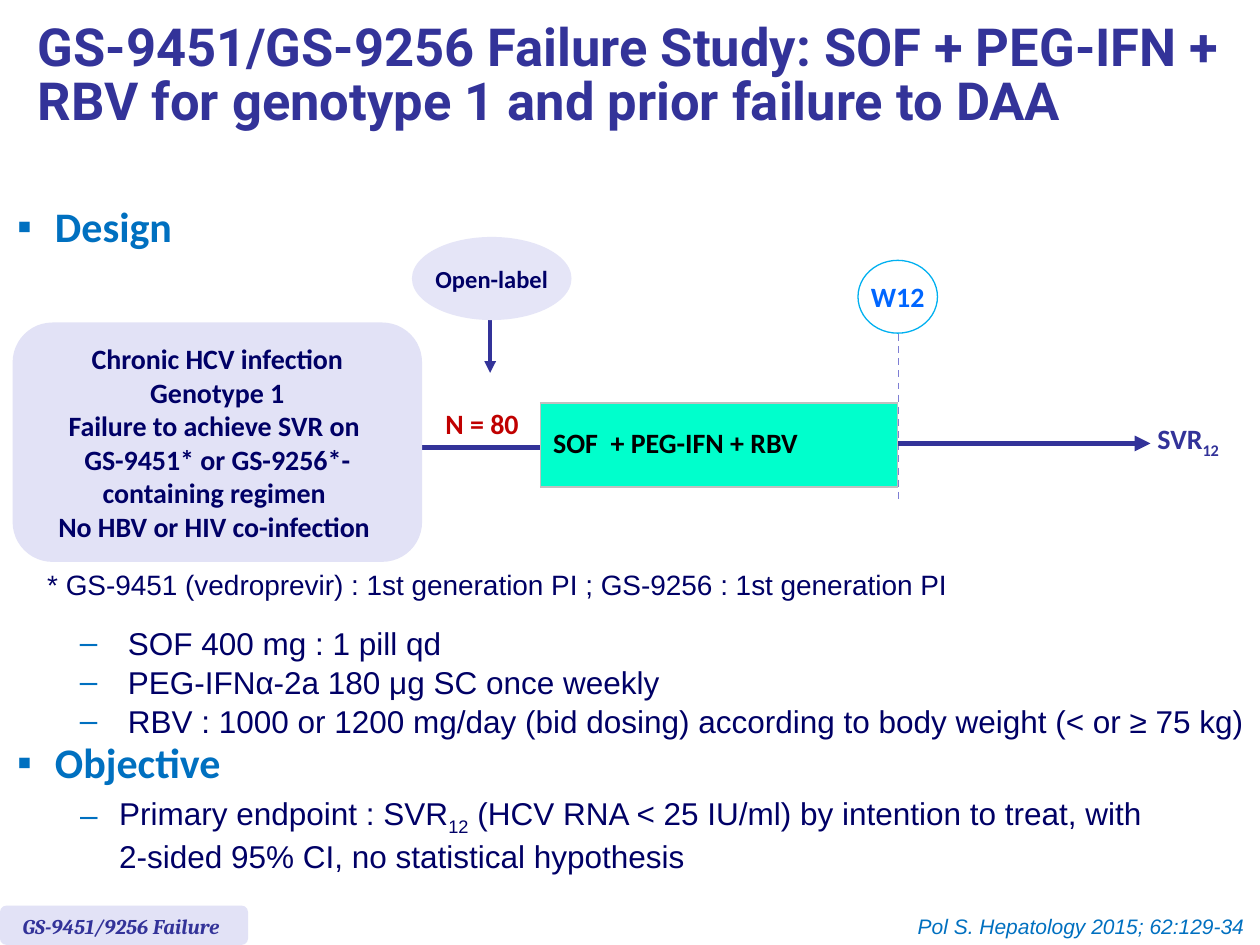
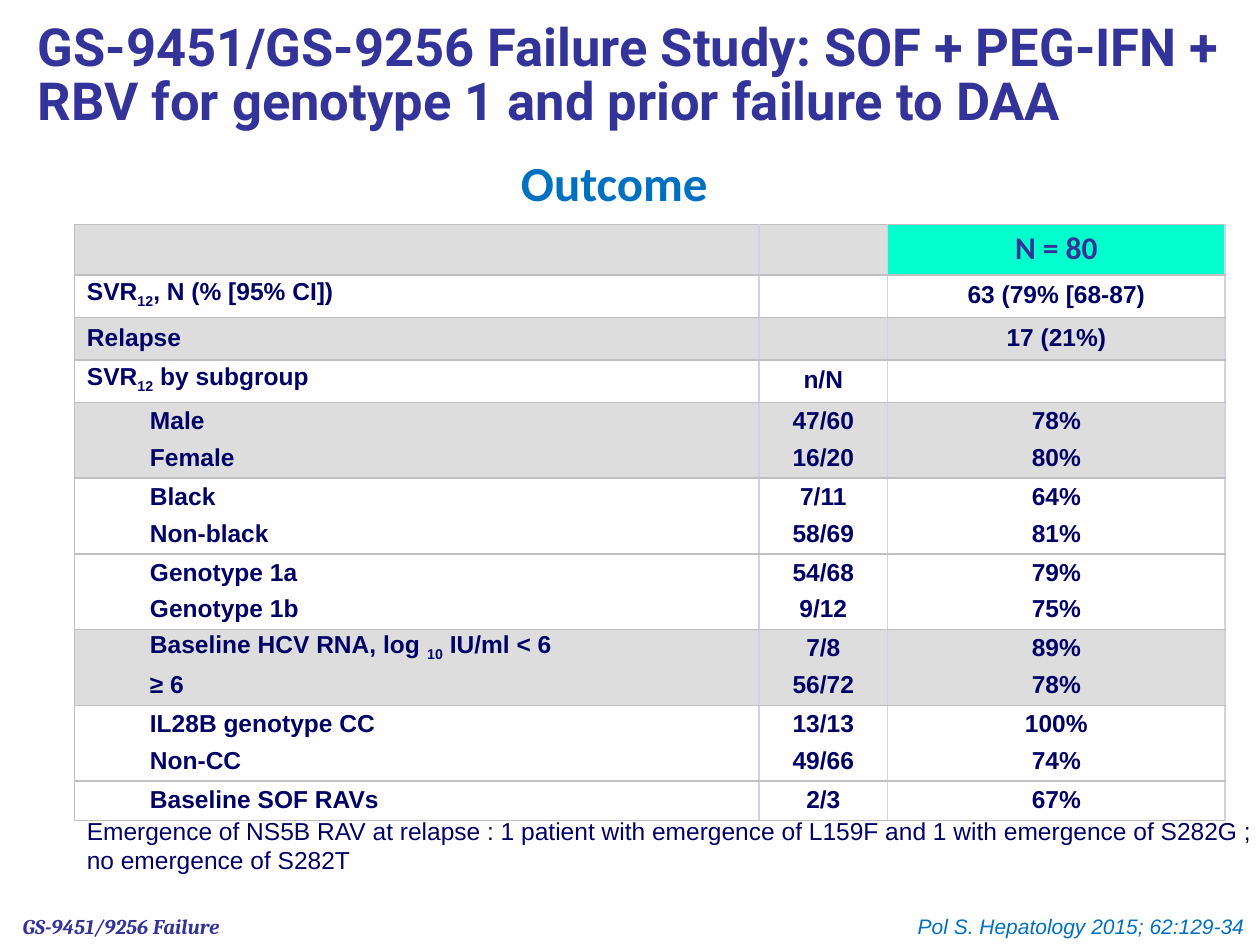
from dataclasses import dataclass

from lxml import etree
from pptx import Presentation
from pptx.dml.color import RGBColor
from pptx.enum.dml import MSO_LINE
from pptx.enum.shapes import MSO_CONNECTOR, MSO_SHAPE
from pptx.enum.text import MSO_ANCHOR, MSO_AUTO_SIZE, PP_ALIGN
from pptx.oxml.ns import qn
from pptx.util import Pt

STRAIGHT = MSO_CONNECTOR.STRAIGHT
ELLIPSE, ROUNDED = MSO_SHAPE.OVAL, MSO_SHAPE.ROUNDED_RECTANGLE
LEFT, CENTER, RIGHT = PP_ALIGN.LEFT, PP_ALIGN.CENTER, PP_ALIGN.RIGHT
TOP, MIDDLE = MSO_ANCHOR.TOP, MSO_ANCHOR.MIDDLE
DASH = MSO_LINE.DASH
NO_FIT = MSO_AUTO_SIZE.NONE

INDIGO, NAVY, BLUE = "333399", "000066", "0070C0"
LAVENDER, AQUA, WHITE = "E2E2F6", "00FFCC", "FFFFFF"
GREY, RULE, LILAC = "DDDDDD", "C0C0C0", "D0D0F0"

TITLE = ("GS-9451/GS-9256 Failure Study: SOF + PEG-IFN + RBV "
         "for genotype 1 and prior failure to DAA")
STUDY = "GS-9451/9256 Failure"
CITATION = "Pol S. Hepatology 2015; 62:129-34"


@dataclass(frozen=True)
class Style:
    size: float
    font: str
    color: str
    bold: bool = False
    italic: bool = False
    align: PP_ALIGN = LEFT
    spacing: object = None
    before: float = 0
    after: float = 0
    margin: float = 0
    hanging: float = 0
    bullet: str = ""


@dataclass(frozen=True)
class Box:
    x: float
    y: float
    w: float
    h: float

    def lengths(self) -> list:
        return [Pt(v) for v in (self.x, self.y, self.w, self.h)]


@dataclass(frozen=True)
class Line:
    x1: float
    y1: float
    x2: float
    y2: float
    width: float
    color: str = INDIGO
    dashed: bool = False
    arrow: bool = False


@dataclass(frozen=True)
class Bubble:
    shape: MSO_SHAPE
    box: Box
    fill: str
    lines: tuple
    style: Style
    outline: str = ""
    inset: float = 7.2


@dataclass(frozen=True)
class Row:
    height: float
    fill: str
    cells: tuple
    indented: bool = False


HEADING = Style(30, "Roboto", INDIGO, bold=True, spacing=0.85)
SECTION = Style(24, "Calibri", BLUE, bold=True, margin=21.6, hanging=21.6, bullet="▪")
DOSE = Style(18, "Arial", NAVY, before=0.7, margin=63.4, hanging=27.4, bullet="–")
ENDPOINT = Style(18, "Arial", NAVY, before=4, margin=58.3, hanging=22.3, bullet="–")
STUDY_TAG = Style(12, "Cambria", INDIGO, bold=True, italic=True)
SOURCE = Style(12, "Arial", BLUE, italic=True, align=RIGHT)
NOTE = Style(16, "Arial", NAVY)
SMALL_NOTE = Style(14, "Arial", NAVY)
COUNT = Style(16, "Calibri", "C00000", bold=True, align=CENTER)
RESULT = Style(16, "Calibri", INDIGO, bold=True)
ARM = Style(16, "Calibri", "000000", bold=True, spacing=0.8)
POPULATION = Style(16, "Calibri", NAVY, bold=True, align=CENTER)
LABEL = Style(14, "Calibri", NAVY, bold=True, align=CENTER)
WEEK = Style(16, "Calibri", "0066FF", bold=True, align=CENTER)
OUTCOME = Style(28, "Calibri", BLUE, bold=True, align=CENTER, spacing=Pt(15.2))
HEAD_CELL = Style(18, "Calibri", INDIGO, bold=True, align=CENTER, spacing=Pt(21), after=6)
NAME_CELL = Style(14, "Arial", NAVY, bold=True, spacing=Pt(15), after=6)
GROUP_CELL = Style(14, "Arial", NAVY, bold=True, spacing=Pt(15), after=6, margin=36)
VALUE_CELL = Style(14, "Arial", NAVY, bold=True, align=CENTER, spacing=Pt(15), after=6)

CONNECTORS = (
    Line(237.6, 255.6, 315.4, 255.6, 3),
    Line(513.4, 190.8, 513.4, 285.1, 1, color="7E7ED4", dashed=True),
    Line(513.4, 253.4, 657.4, 253.4, 3, arrow=True),
    Line(280.1, 182.2, 280.1, 213.1, 2.25, arrow=True),
)

BUBBLES = (
    Bubble(ELLIPSE, Box(490.3, 148.8, 45.4, 41.6), WHITE, ("W12",), WEEK,
           outline="00B0F0", inset=0),
    Bubble(ROUNDED, Box(7.2, 184.3, 234, 136.8), LAVENDER,
           ("Chronic HCV infection", "Genotype 1", "Failure to achieve SVR on ",
            "GS-9451* or GS-9256*-", "containing regimen ",
            "No HBV or HIV co-infection "), POPULATION),
    Bubble(ELLIPSE, Box(235.4, 135.4, 91.2, 47.5), "E5E5F7", ("Open-label",), LABEL, inset=0),
)

ROWS = (
    Row(28.4, GREY, ("", "", "N = 80")),
    Row(24.3, WHITE, ("SVR|12|, N (% [95% CI])", "", "63 (79% [68-87)")),
    Row(24.3, GREY, ("Relapse", "", "17 (21%)")),
    Row(24.3, WHITE, ("SVR|12| by subgroup", "n/N", "")),
    Row(43.3, GREY, ("Male\nFemale", "47/60\n16/20", "78%\n80%"), True),
    Row(43.3, WHITE, ("Black\nNon-black", "7/11\n58/69", "64%\n81%"), True),
    Row(43.3, WHITE, ("Genotype 1a\nGenotype 1b", "54/68\n9/12", "79%\n75%"), True),
    Row(43.3, GREY, ("Baseline HCV RNA, log |10| IU/ml < 6\n≥ 6", "7/8\n56/72", "89%\n78%"), True),
    Row(43.3, WHITE, ("IL28B genotype CC\nNon-CC", "13/13\n49/66", "100%\n74%"), True),
    Row(22.4, WHITE, ("Baseline SOF RAVs", "2/3", "67%"), True),
)


def rgb(color: str) -> RGBColor:
    return RGBColor.from_string(color)


def add_bullet(p, style: Style) -> None:
    pPr = p._p.get_or_add_pPr()
    pPr.set("marL", str(Pt(style.margin)))
    pPr.set("indent", str(-Pt(style.hanging)))
    if style.bullet:
        color = etree.SubElement(pPr, qn("a:buClr"))
        etree.SubElement(color, qn("a:srgbClr"), val=BLUE)
        etree.SubElement(pPr, qn("a:buFont"), typeface="Arial")
        etree.SubElement(pPr, qn("a:buChar"), char=style.bullet)


def write_paragraph(p, text: str, style: Style, first: bool) -> None:
    add_bullet(p, style)
    p.alignment = style.align
    p.space_before = Pt(0 if first else style.before)
    p.space_after = Pt(style.after)
    if style.spacing:
        p.line_spacing = style.spacing
    if not text:
        etree.SubElement(p._p, qn("a:endParaRPr"), sz=str(style.size * 100))
        return
    for i, part in enumerate(text.split("|")):
        if not part:
            continue
        r = p.add_run()
        r.text = part
        f = r.font
        f.size, f.name = Pt(style.size), style.font
        f.bold, f.italic = style.bold, style.italic
        f.color.rgb = rgb(style.color)
        if i % 2:
            f._element.set("baseline", "-25000")


def write(tf, *items: tuple[str, Style]) -> None:
    for i, (text, style) in enumerate(items):
        p = tf.add_paragraph() if i else tf.paragraphs[0]
        write_paragraph(p, text, style, i == 0)


def place(sp, box: Box) -> None:
    sp.left, sp.top, sp.width, sp.height = box.lengths()


def fill_placeholder(sp, box: Box, anchor: MSO_ANCHOR, *items: tuple[str, Style]) -> None:
    place(sp, box)
    tf = sp.text_frame
    tf.auto_size = NO_FIT
    tf.vertical_anchor = anchor
    write(tf, *items)


def add_text(s, box: Box, *items: tuple[str, Style], wrap: bool = True):
    tf = s.shapes.add_textbox(*box.lengths()).text_frame
    tf.word_wrap = wrap
    write(tf, *items)
    return tf


def add_filled(s, shape: MSO_SHAPE, box: Box, fill: str, outline: str = ""):
    sp = s.shapes.add_shape(shape, *box.lengths())
    sp.shadow.inherit = False
    sp.fill.solid()
    sp.fill.fore_color.rgb = rgb(fill)
    if outline:
        sp.line.color.rgb = rgb(outline)
        sp.line.width = Pt(0.75)
    else:
        sp.line.fill.background()
    return sp


def add_bubble(s, bubble: Bubble) -> None:
    sp = add_filled(s, bubble.shape, bubble.box, bubble.fill, bubble.outline)
    tf = sp.text_frame
    tf.word_wrap = not bubble.outline
    tf.vertical_anchor = MIDDLE
    tf.margin_left = tf.margin_right = Pt(bubble.inset)
    tf.margin_top = tf.margin_bottom = Pt(bubble.inset / 2)
    write(tf, *((text, bubble.style) for text in bubble.lines))


def add_line(s, line: Line) -> None:
    ends = [Pt(v) for v in (line.x1, line.y1, line.x2, line.y2)]
    c = s.shapes.add_connector(STRAIGHT, *ends)
    c.line.color.rgb = rgb(line.color)
    c.line.width = Pt(line.width)
    if line.dashed:
        c.line.dash_style = DASH
    if line.arrow:
        etree.SubElement(c.line._get_or_add_ln(), qn("a:tailEnd"), type="triangle")
    etree.SubElement(c._element.spPr, qn("a:effectLst"))


def format_cell(cell, fill: str, left: str, right: str) -> None:
    tcPr = cell._tc.get_or_add_tcPr()
    for side, color in (("L", left), ("R", right), ("T", RULE), ("B", RULE)):
        ln = etree.SubElement(tcPr, qn(f"a:ln{side}"), w=str(Pt(1)))
        solid = etree.SubElement(ln, qn("a:solidFill"))
        etree.SubElement(solid, qn("a:srgbClr"), val=color)
    cell.fill.solid()
    cell.fill.fore_color.rgb = rgb(fill)
    cell.vertical_anchor = MIDDLE


def add_grid(s, x: float, y: float, widths: tuple, heights: tuple):
    box = Box(x, y, sum(widths), sum(heights))
    table = s.shapes.add_table(len(heights), len(widths), *box.lengths()).table
    table.first_row = table.horz_banding = False
    for column, width in zip(table.columns, widths):
        column.width = Pt(width)
    for row, height in zip(table.rows, heights):
        row.height = Pt(height)
    return table


def add_base(prs, layout: int):
    s = prs.slides.add_slide(prs.slide_layouts[layout])
    fill_placeholder(s.shapes.title, Box(14.4, 5.8, 697.7, 77), MIDDLE, (TITLE, HEADING))
    return s


def add_footer(s) -> None:
    add_text(s, Box(5.8, 518.4, 144, 21.6), (STUDY, STUDY_TAG))
    add_text(s, Box(480.7, 518.4, 237.6, 21.6), (CITATION, SOURCE))


def build_design(prs) -> None:
    s = add_base(prs, 3)
    fill_placeholder(s.placeholders[1], Box(2.6, 111.2, 657.4, 37.4), TOP, ("Design", SECTION))
    fill_placeholder(
        s.placeholders[2], Box(2.6, 417.3, 674.6, 96.5), TOP, ("Objective", SECTION),
        ("Primary endpoint : SVR|12| (HCV RNA < 25 IU/ml) by intention to treat, "
         "with 2-sided 95% CI, no statistical hypothesis", ENDPOINT))
    add_filled(s, ROUNDED, Box(0, 517.5, 141.8, 22.5), LAVENDER)
    add_footer(s)
    for line in CONNECTORS:
        add_line(s, line)
    for bubble in BUBBLES:
        add_bubble(s, bubble)
    arm = add_grid(s, 308.9, 230.4, (204,), (48,)).cell(0, 0)
    format_cell(arm, AQUA, RULE, RULE)
    write(arm.text_frame, ("SOF  + PEG-IFN + RBV", ARM))
    add_text(s, Box(654.3, 237.6, 51.8, 26.6), ("SVR|12", RESULT), wrap=False)
    add_text(s, Box(247, 229, 56.9, 26.6), ("N = 80", COUNT))
    add_text(s, Box(19.9, 320.8, 535.7, 26.6),
             ("* GS-9451 (vedroprevir) : 1st generation PI ; GS-9256 : 1st generation PI", NOTE),
             wrap=False)
    doses = ("SOF 400 mg : 1 pill qd", "PEG-IFNα-2a 180 μg SC once weekly",
             "RBV : 1000 or 1200 mg/day (bid dosing) according to body weight (< or ≥ 75 kg)")
    add_text(s, Box(2.6, 352.9, 716, 74.2), *((dose, DOSE) for dose in doses))


def build_outcome(prs) -> None:
    s = add_base(prs, 5)
    add_text(s, Box(0, 102.2, 702, 25.9), ("Outcome", OUTCOME))
    table = add_grid(s, 42.5, 128.2, (391.2, 73.6, 192.8), tuple(row.height for row in ROWS))
    for i, row in enumerate(ROWS):
        for j, text in enumerate(row.cells):
            cell = table.cell(i, j)
            format_cell(cell, AQUA if i == 0 and j == 2 else row.fill,
                        LILAC if j else RULE, LILAC)
            if i == 0:
                style = HEAD_CELL
            elif j:
                style = VALUE_CELL
            else:
                style = GROUP_CELL if row.indented else NAME_CELL
            write(cell.text_frame, *((part, style) for part in text.split("\n")))
    tf = add_text(s, Box(42.5, 462.8, 677.5, 41),
                  ("Emergence of NS5B RAV at relapse : 1 patient with emergence of L159F "
                   "and 1 with emergence of S282G ; no emergence of S282T", SMALL_NOTE))
    tf.margin_right = Pt(3)
    add_footer(s)


def main() -> None:
    prs = Presentation()
    prs.slide_width, prs.slide_height = Pt(720), Pt(540)
    build_design(prs)
    build_outcome(prs)
    prs.save("out.pptx")


if __name__ == "__main__":
    main()
